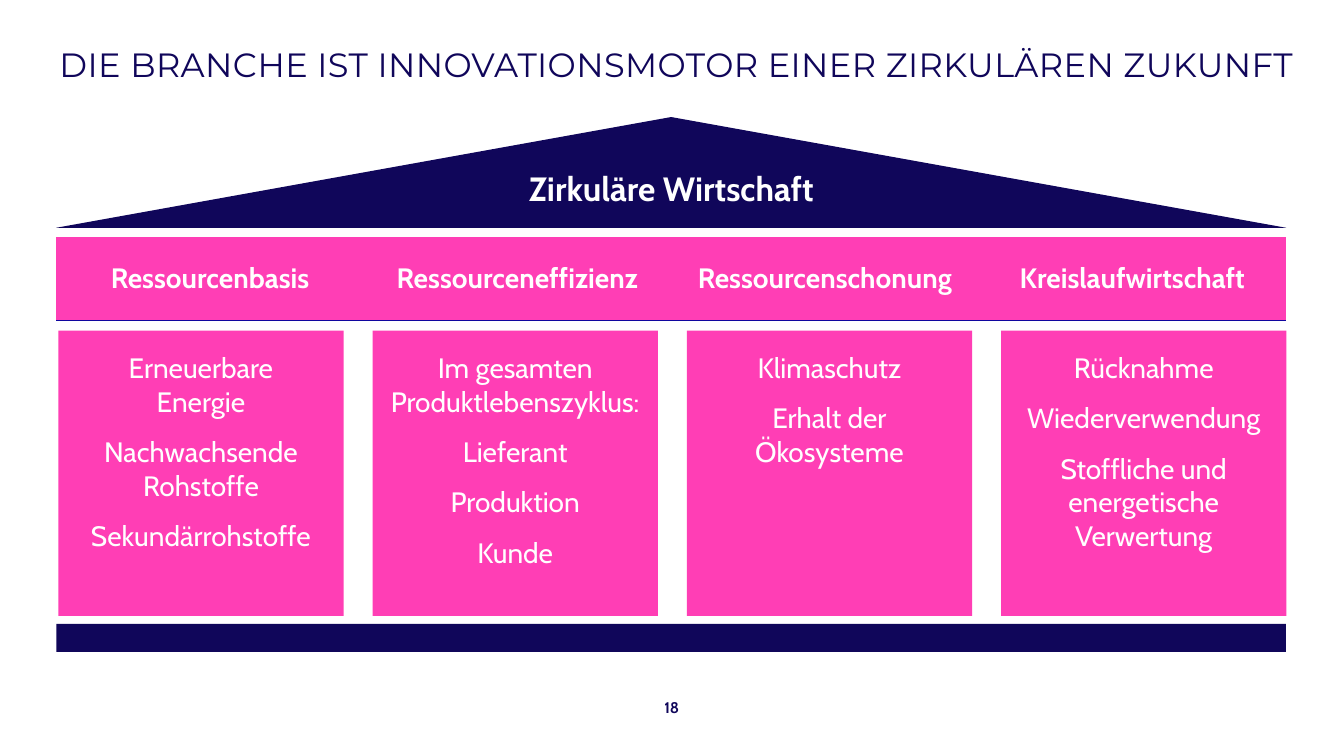
import dataclasses

import lxml.etree
import pptx
import pptx.dml.color
import pptx.enum.shapes
import pptx.enum.text
import pptx.oxml.ns
import pptx.util

Cm = pptx.util.Cm
Pt = pptx.util.Pt
SHAPE = pptx.enum.shapes.MSO_SHAPE
ALIGN = pptx.enum.text.PP_ALIGN
ANCHOR = pptx.enum.text.MSO_ANCHOR
qn = pptx.oxml.ns.qn

COLORS = {"navy": "10065A", "pink": "FF3EB5", "white": "FFFFFF", "rule": "10069F"}
LEFT, WIDTH = 1.42, 30.99
PILLAR_LEFT, PILLAR_STEP, PILLAR_SIZE = 1.47, 7.92, 7.19
NO_TABLE_STYLE = "{2D5ABB26-0587-4C30-8999-92F81FD0307C}"


@dataclasses.dataclass(frozen=True)
class Pillar:
    heading: str
    points: tuple[str, ...]


PILLARS = (
    Pillar("Ressourcenbasis",
           ("Erneuerbare\nEnergie", "Nachwachsende Rohstoffe", "Sekundärrohstoffe")),
    Pillar("Ressourceneffizienz",
           ("Im gesamten Produktlebenszyklus:", "Lieferant", "Produktion", "Kunde")),
    Pillar("Ressourcenschonung", ("Klimaschutz", "Erhalt der Ökosysteme")),
    Pillar("Kreislaufwirtschaft",
           ("Rücknahme", "Wiederverwendung", "Stoffliche und energetische Verwertung")),
)


def rgb(name: str) -> pptx.dml.color.RGBColor:
    return pptx.dml.color.RGBColor.from_string(COLORS[name])


def write(tf, *texts: str, size: float = 20, font: str = "Cabin", color: str = "white",
          bold: bool = False, align=ALIGN.CENTER, after: float = 0,
          line: float = 1.0, tracking: float = 0) -> None:
    """Fill a text frame with one paragraph per text; a newline breaks the line."""
    for i, text in enumerate(texts):
        p = tf.paragraphs[0] if i == 0 else tf.add_paragraph()
        p.alignment = align
        p.space_after = Pt(after)
        p.line_spacing = line
        for j, part in enumerate(text.split("\n")):
            if j:
                p.add_line_break()
            r = p.add_run()
            r.text = part
            r.font.name = font
            r.font.size = Pt(size)
            r.font.bold = bold
            r.font.color.rgb = rgb(color)
            if tracking:
                r.font._element.set("spc", str(round(tracking * 100)))


def set_frame(tf, anchor, left: float = 0, top: float = 0,
              right: float = 0, bottom: float = 0) -> None:
    tf.word_wrap = True
    tf.vertical_anchor = anchor
    tf.margin_left, tf.margin_top = Cm(left), Cm(top)
    tf.margin_right, tf.margin_bottom = Cm(right), Cm(bottom)


def add_label(s, x: float, y: float, w: float, h: float, text: str,
              margin: float = 0, **style) -> None:
    tf = s.shapes.add_textbox(Cm(x), Cm(y), Cm(w), Cm(h)).text_frame
    set_frame(tf, ANCHOR.MIDDLE, top=margin, bottom=margin)
    write(tf, text, color="navy", **style)


def add_block(s, kind, x: float, y: float, w: float, h: float, color: str):
    sp = s.shapes.add_shape(kind, Cm(x), Cm(y), Cm(w), Cm(h))
    sp.shadow.inherit = False
    sp.fill.solid()
    sp.fill.fore_color.rgb = rgb(color)
    sp.line.fill.background()
    return sp


def add_bottom_border(cell, color: str, width: float) -> None:
    ln = lxml.etree.Element(qn("a:lnB"), w=str(Pt(width)))
    fill = lxml.etree.SubElement(ln, qn("a:solidFill"))
    lxml.etree.SubElement(fill, qn("a:srgbClr"), val=COLORS[color])
    cell._tc.get_or_add_tcPr().insert(0, ln)


def add_headings(s) -> None:
    frame = s.shapes.add_table(1, len(PILLARS), Cm(LEFT), Cm(5.97), Cm(WIDTH), Cm(2.11))
    table = frame.table
    table.first_row = table.horz_banding = False
    table._tbl.tblPr.find(qn("a:tableStyleId")).text = NO_TABLE_STYLE
    for cell, pillar in zip(table.rows[0].cells, PILLARS):
        cell.fill.solid()
        cell.fill.fore_color.rgb = rgb("pink")
        cell.vertical_anchor = ANCHOR.MIDDLE
        write(cell.text_frame, pillar.heading, bold=True)
        add_bottom_border(cell, "rule", 1.18)


def add_pillar(s, index: int, pillar: Pillar) -> None:
    sp = add_block(s, SHAPE.RECTANGLE, PILLAR_LEFT + index * PILLAR_STEP, 8.33,
                   PILLAR_SIZE, PILLAR_SIZE, "pink")
    set_frame(sp.text_frame, ANCHOR.TOP, left=0.4, top=0.5, right=0.4, bottom=0.3)
    write(sp.text_frame, *pillar.points, after=12)


def main() -> None:
    prs = pptx.Presentation()
    prs.slide_width, prs.slide_height = Cm(33.87), Cm(19.05)
    s = prs.slides.add_slide(prs.slide_layouts[6])

    add_label(s, 16.18, 17.48, 1.5, 0.71, "18", size=11, bold=True)
    add_label(s, 1.5, 0.38, 31.83, 2.49,
              "DIE BRANCHE IST INNOVATIONSMOTOR EINER ZIRKULÄREN ZUKUNFT",
              margin=0.1, size=24, font="Montserrat", align=ALIGN.LEFT, tracking=0.3)

    roof = add_block(s, SHAPE.ISOSCELES_TRIANGLE, LEFT, 2.95, WIDTH, 2.79, "navy")
    set_frame(roof.text_frame, ANCHOR.TOP)
    write(roof.text_frame, "Zirkuläre Wirtschaft", size=24, bold=True, after=10, line=0.9)

    for i, pillar in enumerate(PILLARS):
        add_pillar(s, i, pillar)
    add_block(s, SHAPE.RECTANGLE, LEFT, 15.72, WIDTH, 0.71, "navy")
    add_headings(s)

    prs.save("out.pptx")


if __name__ == "__main__":
    main()
